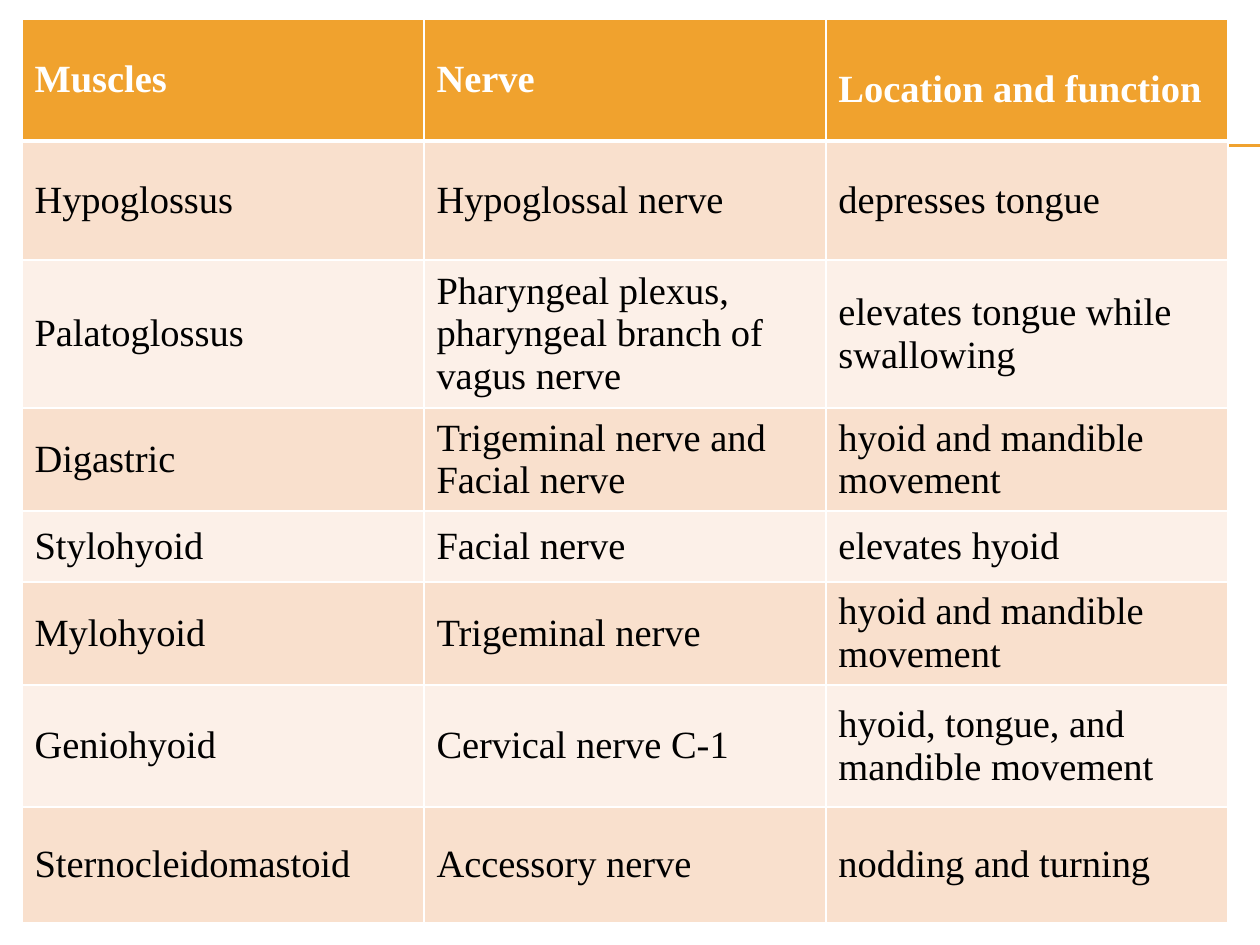
import pptx
import pptx.dml.color
import pptx.enum.shapes
import pptx.enum.text
import pptx.oxml.ns
import pptx.util
from lxml import etree

RGBColor = pptx.dml.color.RGBColor
ORANGE = RGBColor(0xF0, 0xA2, 0x2E)
PEACH = RGBColor(0xF9, 0xE0, 0xCD)
CREAM = RGBColor(0xFC, 0xF0, 0xE8)
WHITE = RGBColor(0xFF, 0xFF, 0xFF)
BLACK = RGBColor(0, 0, 0)

FONT = "Times New Roman"
EMU_PER_PX = 914400 / 126
COL_WIDTH = 402
ROW_HEIGHTS = [122, 119, 148, 103, 71, 103, 122, 116]
ROWS = [
    ("Muscles", "Nerve", "Location and function"),
    ("Hypoglossus", "Hypoglossal nerve", "depresses tongue"),
    ("Palatoglossus", "Pharyngeal plexus, pharyngeal branch of vagus nerve",
     "elevates tongue while swallowing"),
    ("Digastric", "Trigeminal nerve and Facial nerve", "hyoid and mandible movement"),
    ("Stylohyoid", "Facial nerve", "elevates hyoid"),
    ("Mylohyoid", "Trigeminal nerve", "hyoid and mandible movement"),
    ("Geniohyoid", "Cervical nerve C-1", "hyoid, tongue, and mandible movement"),
    ("Sternocleidomastoid", "Accessory nerve", "nodding and turning"),
]


def px(n):
    return pptx.util.Emu(round(n * EMU_PER_PX))


def add_rule(slide, y):
    line = slide.shapes.add_connector(
        pptx.enum.shapes.MSO_CONNECTOR.STRAIGHT, px(70), px(y), px(1260), px(y))
    line.line.color.rgb = ORANGE
    line.line.width = pptx.util.Pt(0.75)
    etree.SubElement(line._element.spPr, pptx.oxml.ns.qn("a:effectLst"))


def set_borders(cell, widths):
    qn = pptx.oxml.ns.qn
    tcPr = cell._tc.get_or_add_tcPr()
    for i, (side, width) in enumerate(widths.items()):
        ln = etree.Element(qn(f"a:ln{side}"), w=str(pptx.util.Pt(width)))
        fill = etree.SubElement(ln, qn("a:solidFill"))
        etree.SubElement(fill, qn("a:srgbClr"), val=str(WHITE))
        tcPr.insert(i, ln)


def format_cell(cell, text, row):
    header = row == 0
    cell.text = text
    cell.vertical_anchor = pptx.enum.text.MSO_ANCHOR.MIDDLE
    cell.fill.solid()
    cell.fill.fore_color.rgb = ORANGE if header else (PEACH if row % 2 else CREAM)
    font = cell.text_frame.paragraphs[0].font
    font.name = FONT
    font.size = pptx.util.Pt(22)
    font.bold = header
    font.color.rgb = WHITE if header else BLACK
    set_borders(cell, {"L": 1, "R": 1, "T": 3 if row == 1 else 1, "B": 3 if header else 1})


def add_muscle_table(slide):
    cols = len(ROWS[0])
    frame = slide.shapes.add_table(
        len(ROWS), cols, px(22), px(19), px(COL_WIDTH * cols), px(sum(ROW_HEIGHTS)))
    table = frame.table
    for col in table.columns:
        col.width = px(COL_WIDTH)
    for r, (height, texts) in enumerate(zip(ROW_HEIGHTS, ROWS)):
        table.rows[r].height = px(height)
        for c, text in enumerate(texts):
            format_cell(table.cell(r, c), text, r)
    location = table.cell(0, cols - 1)
    location.vertical_anchor = pptx.enum.text.MSO_ANCHOR.TOP
    location.margin_top = px(49)


def main():
    prs = pptx.Presentation()
    prs.slide_width = px(1260)
    prs.slide_height = px(945)
    slide = prs.slides.add_slide(prs.slide_layouts[6])
    for y in (145, 146):
        add_rule(slide, y)
    add_muscle_table(slide)
    prs.save("out.pptx")


if __name__ == "__main__":
    main()
